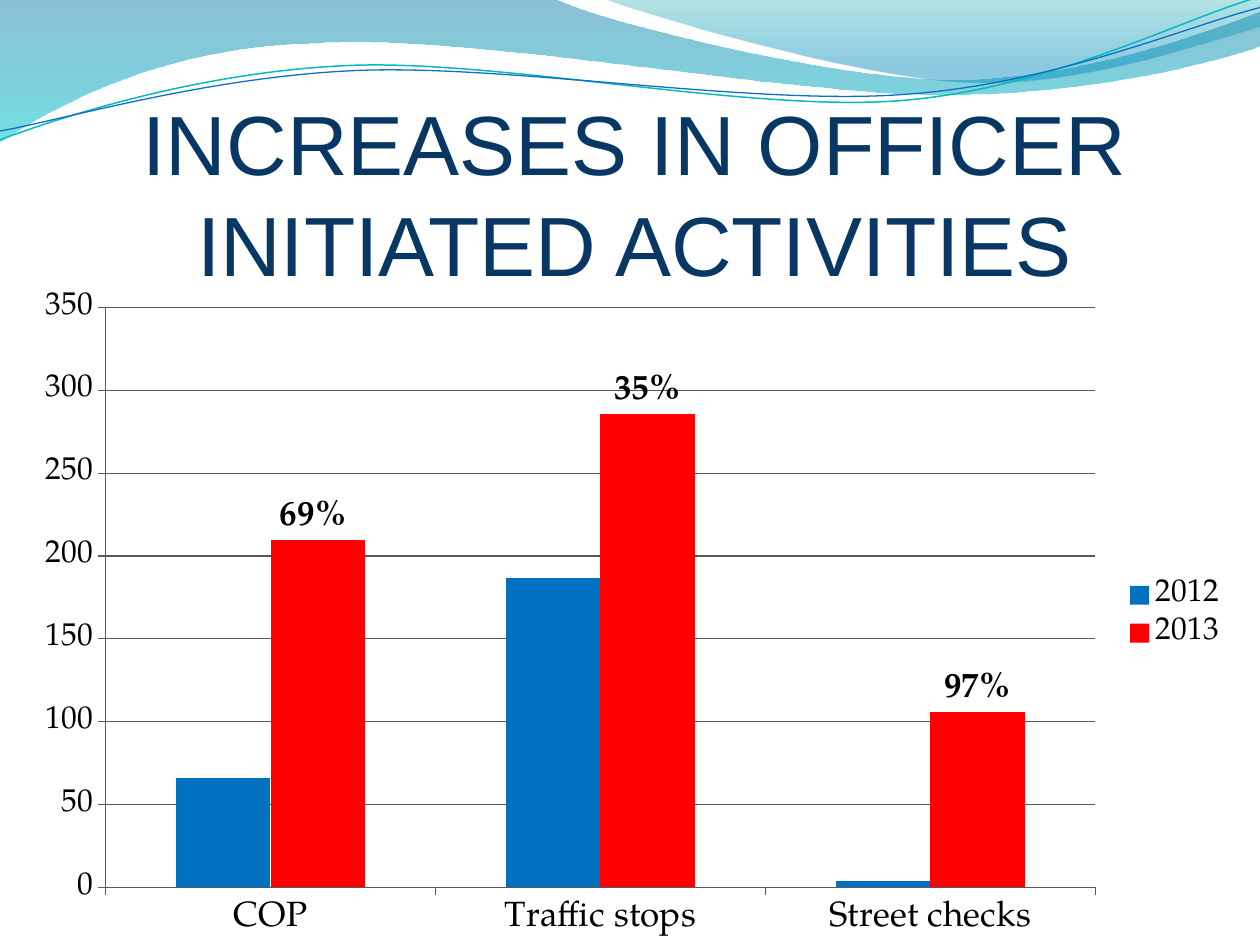
from dataclasses import dataclass
from math import cos, radians, sin

from lxml.etree import SubElement
from pptx import Presentation
from pptx.chart.data import CategoryChartData
from pptx.dml.color import RGBColor
from pptx.enum.chart import XL_CHART_TYPE, XL_LABEL_POSITION, XL_LEGEND_POSITION, XL_TICK_MARK
from pptx.enum.text import MSO_ANCHOR, PP_ALIGN
from pptx.oxml.ns import qn
from pptx.util import Inches, Pt


@dataclass(frozen=True)
class Theme:
    """Hold the fonts, colours and type sizes."""
    head: str = "Arial"
    body: str = "TeX Gyre Pagella"
    navy: str = "083763"
    black: str = "000000"
    grid: str = "595959"
    bars: tuple = ("0070C0", "FF0000")
    band: tuple = ((0, "0074A1", 45), (1, "00C6CF", 55))
    crest: tuple = ((0, "00A1A9", 30), (0.8, "008BBF", 45))
    lines: tuple = ("0AB8BF", "0F6FC6")
    title: int = 48
    large: int = 20
    small: int = 18


THEME = Theme()
TILT = 357.3
BAND = [(0, 0), (4.4, -0.01), (4.76, 0.17, 6.64, 0.63, 7.58, 0.63),
        (8.53, 0.63, 9.58, 0.26, 10, 0.09), (10.01, 0.36),
        (9.83, 0.44, 8.7, 0.76, 7.46, 0.75), (6.22, 0.75, 3.82, 0.28, 2.57, 0.34),
        (1.29, 0.36, 0.46, 0.83, -0.01, 1.13)]
CREST = [(4.79, -0.01), (5.09, 0.11, 6.82, 0.62, 7.69, 0.65),
         (8.56, 0.69, 9.61, 0.32, 10, 0.21), (10, 0)]
TEAL = [(0, 1.11), (0.48, 0.93, 1.58, 0.57, 2.77, 0.52),
        (3.95, 0.47, 5.93, 0.89, 7.13, 0.8), (8.33, 0.71, 9.38, 0.15, 9.98, -0.02)]
BLUE = [(0, 1.04), (0.47, 0.96, 1.64, 0.61, 2.83, 0.56),
        (4.03, 0.51, 5.97, 0.84, 7.17, 0.75), (8.36, 0.67, 9.41, 0.21, 10, 0.06)]


def rgb(code):
    """Turn a hex code into a colour."""
    return RGBColor.from_string(code)


def style(font, size, color=THEME.black, name=THEME.body, bold=False):
    """Set the look of a font."""
    font.size, font.name, font.bold = Pt(size), name, bold
    font.color.rgb = rgb(color)


def pairs(part):
    """Split a flat row of numbers into points."""
    return list(zip(part[::2], part[1::2]))


def level(route, mid):
    """Turn a tilted route back to level around its middle."""
    turn = radians(360 - TILT)
    flat = []
    for part in route:
        moved = []
        for x, y in pairs(part):
            dx, dy = x - mid[0], y - mid[1]
            moved += [mid[0] + dx * cos(turn) - dy * sin(turn),
                      mid[1] + dx * sin(turn) + dy * cos(turn)]
        flat.append(tuple(moved))
    return flat


def add_curve(slide, route, close):
    """Draw an outline of straight and cubic parts without shadow."""
    ends = [(Inches(x), Inches(y)) for x, y in (part[-2:] for part in route)]
    pen = slide.shapes.build_freeform(*ends[0])
    pen.add_line_segments(ends[1:], close=close)
    shape = pen.convert_to_shape()
    shape.shadow.inherit = False
    sides = list(shape._element.iter(qn("a:lnTo")))
    for side, part in zip(sides, route[1:]):
        if len(part) == 6:
            side.tag = qn("a:cubicBezTo")
            side.clear()
            for x, y in pairs(part):
                knot = SubElement(side, qn("a:pt"))
                knot.set("x", str(Inches(x) - shape.left))
                knot.set("y", str(Inches(y) - shape.top))
    return shape


def add_wave(slide, route, stops):
    """Draw a wave with a clear gradient from top to bottom."""
    shape = add_curve(slide, route, True)
    shape.line.fill.background()
    shape.fill.gradient()
    shape.fill.gradient_angle = 270
    for stop, (place, color, _) in zip(shape.fill.gradient_stops, stops):
        stop.position = place
        stop.color.rgb = rgb(color)
    tones = shape._element.spPr.iter(qn("a:srgbClr"))
    for tone, (_, _, alpha) in zip(tones, stops):
        SubElement(tone, qn("a:alpha")).set("val", str(alpha * 1000))


def add_line(slide, route, mid, color, width):
    """Draw an open, tilted curve."""
    shape = add_curve(slide, level(route, mid), False)
    shape.rotation = TILT
    shape.fill.background()
    shape.line.color.rgb = rgb(color)
    shape.line.width = Pt(width)


def add_title(slide, text):
    """Add the centred title."""
    box = slide.shapes.add_textbox(Inches(0.33), Inches(1.08), Inches(9.42), Inches(1.25))
    frame = box.text_frame
    frame.text = text
    frame.word_wrap = True
    frame.vertical_anchor = MSO_ANCHOR.BOTTOM
    frame.margin_left = frame.margin_right = frame.margin_bottom = 0
    frame.margin_top = Inches(0.05)
    line = frame.paragraphs[0]
    line.alignment = PP_ALIGN.CENTER
    style(line.runs[0].font, THEME.title, THEME.navy, THEME.head)


def style_line(line):
    """Set a thin grey line."""
    line.color.rgb = rgb(THEME.grid)
    line.width = Pt(0.75)


def style_axis(axis, size):
    """Set the text, ticks and line of an axis."""
    style(axis.tick_labels.font, size)
    axis.major_tick_mark = XL_TICK_MARK.OUTSIDE
    style_line(axis.format.line)


def label_bars(bars, texts):
    """Write a bold label over each bar."""
    labels = bars.data_labels
    labels.show_value = True
    labels.position = XL_LABEL_POSITION.OUTSIDE_END
    style(labels.font, THEME.large, bold=True)
    for index, text in enumerate(texts):
        label = bars.points[index].data_label
        label.text_frame.text = text
        label.position = XL_LABEL_POSITION.OUTSIDE_END
        style(label.text_frame.paragraphs[0].runs[0].font, THEME.large, bold=True)


def add_bars(slide):
    """Add the column chart of both years."""
    data = CategoryChartData(number_format="0")
    data.categories = ["COP", "Traffic stops", "Street checks"]
    data.add_series("2012", (66, 187, 4))
    data.add_series("2013", (210, 286, 106))
    chart = slide.shapes.add_chart(
        XL_CHART_TYPE.COLUMN_CLUSTERED, Inches(0.17), Inches(2.21),
        Inches(9.67), Inches(5.33), data).chart
    style(chart.font, THEME.small)
    chart.has_title = False
    chart.has_legend = True
    chart.legend.position = XL_LEGEND_POSITION.RIGHT
    chart.legend.include_in_layout = False
    style(chart.legend.font, THEME.small)
    style_axis(chart.category_axis, THEME.large)
    axis = chart.value_axis
    style_axis(axis, THEME.small)
    axis.has_major_gridlines = True
    style_line(axis.major_gridlines.format.line)
    plot = chart.plots[0]
    plot.gap_width, plot.overlap, plot.vary_by_categories = 150, 0, False
    for bars, color in zip(plot.series, THEME.bars):
        bars.format.fill.solid()
        bars.format.fill.fore_color.rgb = rgb(color)
        bars.invert_if_negative = False
    label_bars(plot.series[1], ("69% ", "35%", "97%"))


def main():
    """Build and save the slide."""
    deck = Presentation()
    deck.slide_width, deck.slide_height = Inches(10), Inches(7.5)
    slide = deck.slides.add_slide(deck.slide_layouts[6])
    add_wave(slide, BAND, THEME.band)
    add_wave(slide, CREST, THEME.crest)
    add_line(slide, TEAL, (4.99, 0.57), THEME.lines[0], 0.85)
    add_line(slide, BLUE, (5, 0.59), THEME.lines[1], 0.75)
    add_title(slide, "INCREASES IN OFFICER INITIATED ACTIVITIES")
    add_bars(slide)
    deck.save("out.pptx")


if __name__ == "__main__":
    main()
